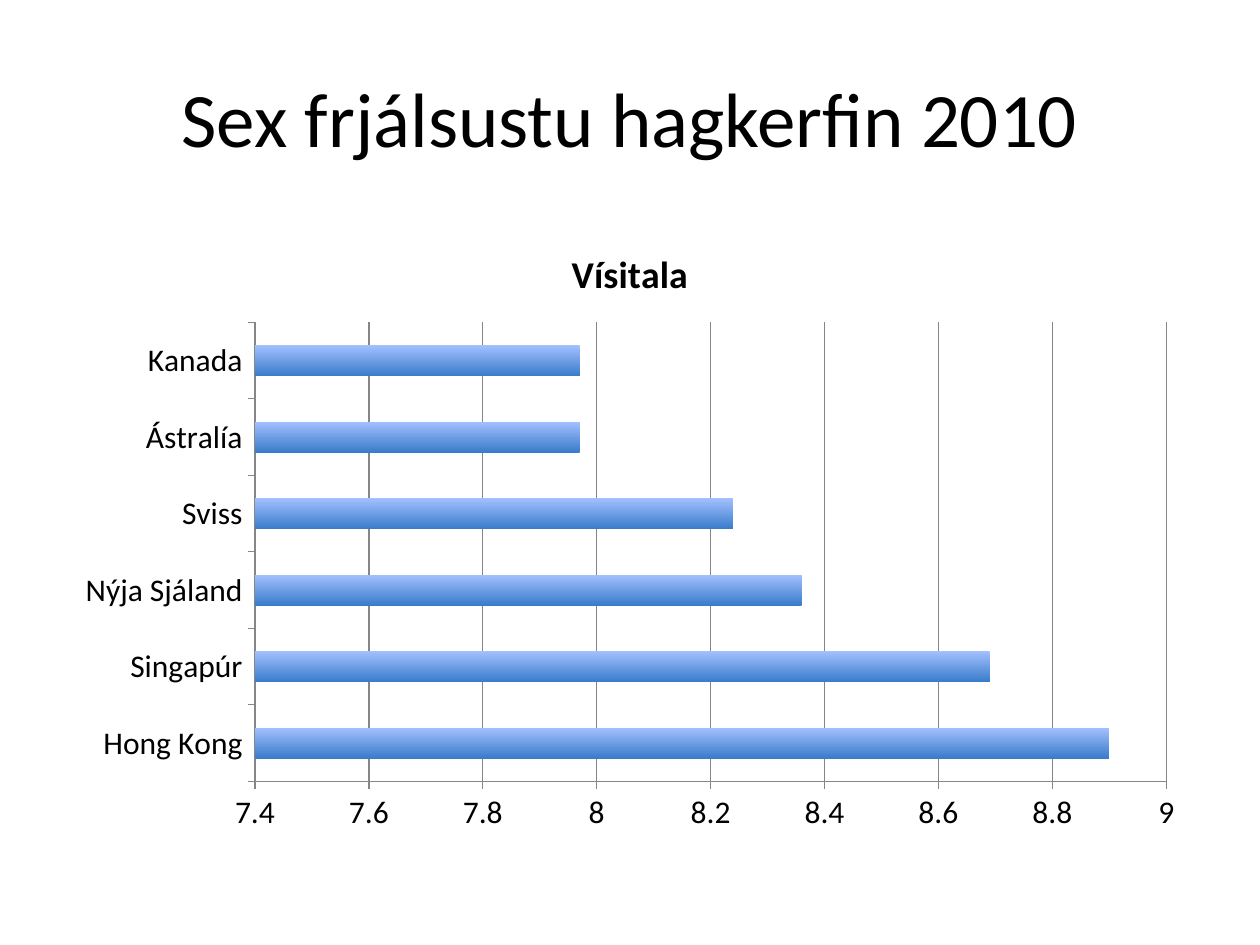
from pptx import Presentation
from pptx.chart.data import CategoryChartData
from pptx.dml.color import RGBColor
from pptx.enum.chart import XL_CHART_TYPE as ChartType, XL_TICK_MARK as Tick
from pptx.enum.text import MSO_ANCHOR as Anchor, PP_ALIGN as Align
from pptx.util import Cm, Pt

# Content
HEADING = "Sex frjálsustu hagkerfin 2010"
INDEX_NAME = "Vísitala"
ECONOMIES = {
    "Hong Kong": 8.9,
    "Singapúr": 8.69,
    "Nýja Sjáland": 8.36,
    "Sviss": 8.24,
    "Ástralía": 7.97,
    "Kanada": 7.97,
}
SCALE = {"minimum_scale": 7.4, "maximum_scale": 9, "major_unit": 0.2}

# Look
COLORS = {"text": "000000", "line": "868686", "bar_top": "A3C0FF", "bar_bottom": "3A7CCB"}
FONT = "Calibri"
MARGIN, WIDTH = Cm(1.27), Cm(22.86)


def color(name):
    return RGBColor.from_string(COLORS[name])


def set_all(target, values):
    for key, value in values.items():
        setattr(target, key, value)


def set_font(font, size, bold=False):
    set_all(font, {"name": FONT, "size": Pt(size), "bold": bold})
    font.color.rgb = color("text")


def set_line(line):
    line.color.rgb = color("line")
    line.width = Pt(0.75)


deck = Presentation()
set_all(deck, {"slide_width": Cm(25.4), "slide_height": Cm(19.05)})
slide = deck.slides.add_slide(deck.slide_layouts[5])

# Heading
heading = slide.shapes.title
set_all(heading, {"left": MARGIN, "top": Cm(0.76), "width": WIDTH, "height": Cm(3.18)})
heading.text_frame.text = HEADING
heading.text_frame.vertical_anchor = Anchor.MIDDLE
heading_line = heading.text_frame.paragraphs[0]
heading_line.alignment = Align.CENTER
set_font(heading_line.runs[0].font, 44)

# Bar chart of the index
index_data = CategoryChartData()
index_data.categories = list(ECONOMIES)
index_data.add_series(INDEX_NAME, list(ECONOMIES.values()))
chart = slide.shapes.add_chart(
    ChartType.BAR_CLUSTERED, MARGIN, Cm(4.45), WIDTH, Cm(12.57), index_data
).chart
set_all(chart, {"has_legend": False, "has_title": True})
set_font(chart.font, 18)
chart.chart_title.text_frame.text = INDEX_NAME
set_font(chart.chart_title.text_frame.paragraphs[0].runs[0].font, 21.6, bold=True)

# Axes
for axis in (chart.category_axis, chart.value_axis):
    set_all(axis, {"major_tick_mark": Tick.OUTSIDE, "minor_tick_mark": Tick.NONE})
    set_line(axis.format.line)
set_all(chart.value_axis, {**SCALE, "has_major_gridlines": True})
set_line(chart.value_axis.major_gridlines.format.line)
set_all(chart.value_axis.tick_labels, {"number_format": "General", "number_format_is_linked": False})

# Bars, shaded from top to bottom
bars = chart.plots[0]
set_all(bars, {"gap_width": 150, "vary_by_categories": False})
bar_fill = bars.series[0].format.fill
bar_fill.gradient()
bar_fill.gradient_angle = 270
for stop, name in zip(bar_fill.gradient_stops, ("bar_top", "bar_bottom")):
    stop.color.rgb = color(name)

deck.save("out.pptx")
